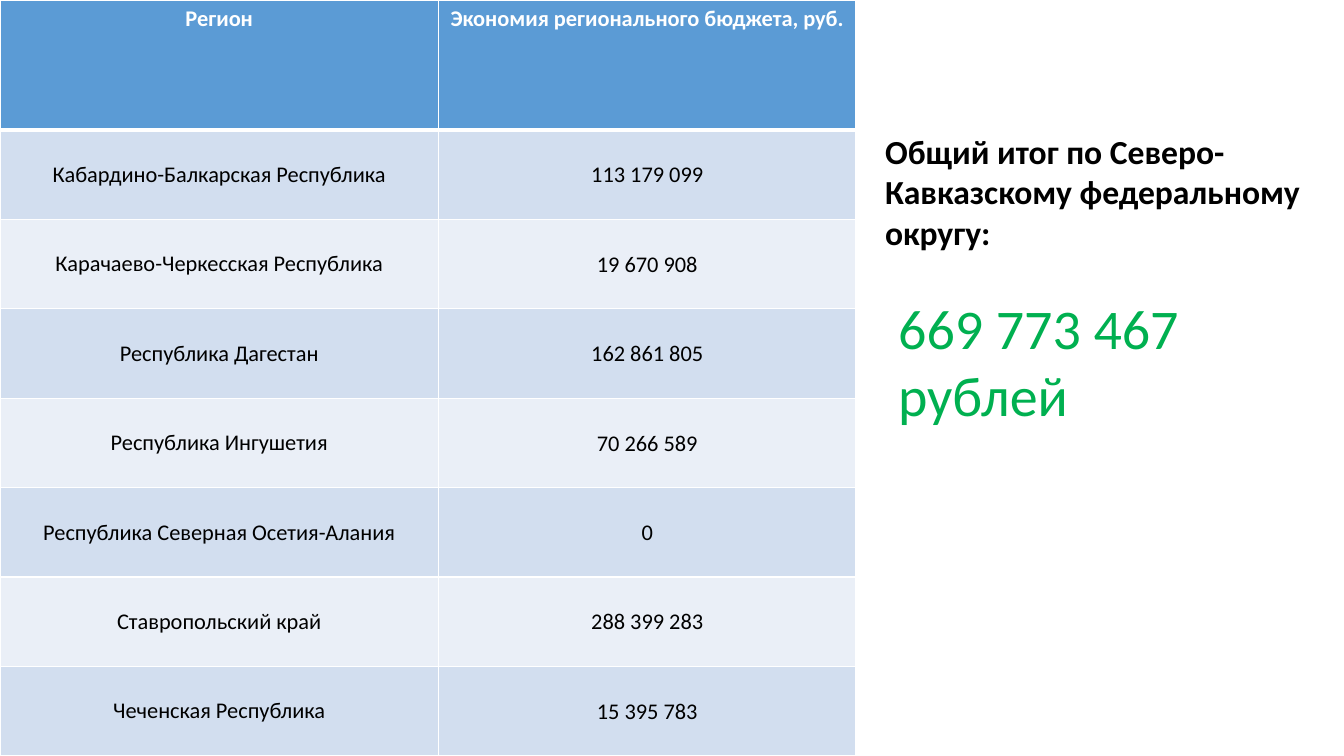
from dataclasses import dataclass

from lxml import etree
from pptx import Presentation
from pptx.dml.color import RGBColor
from pptx.enum.text import MSO_ANCHOR, MSO_AUTO_SIZE, PP_ALIGN
from pptx.oxml.ns import qn
from pptx.util import Inches, Pt

LEFT, CENTER = PP_ALIGN.LEFT, PP_ALIGN.CENTER
TOP, MIDDLE = MSO_ANCHOR.TOP, MSO_ANCHOR.MIDDLE
GROW = MSO_AUTO_SIZE.SHAPE_TO_FIT_TEXT


@dataclass(frozen=True)
class Theme:
    """Colours, type sizes and line widths of the slide."""
    font: str = "Calibri"
    white: str = "FFFFFF"
    black: str = "000000"
    green: str = "00B050"
    head: str = "5B9BD5"
    bands: tuple = ("D2DEEF", "EAEFF7")
    small: int = 16
    large: int = 24
    huge: int = 40
    thin: int = 1
    thick: int = 3


class Board:
    """Draws elements on one slide, placed in percent of its size."""

    def __init__(self, deck, theme):
        """Add a blank slide to the deck."""
        self.deck, self.theme = deck, theme
        self.slide = deck.slides.add_slide(deck.slide_layouts[6])

    def wide(self, share):
        """Turn a percent of the slide's width into a length."""
        return round(self.deck.slide_width * share / 100)

    def high(self, share):
        """Turn a percent of the slide's height into a length."""
        return round(self.deck.slide_height * share / 100)

    def box(self, left, top, width, height):
        """Turn four percents into a place and a size."""
        return self.wide(left), self.high(top), self.wide(width), self.high(height)

    def label(self, frame, words, size, color, bold=False, align=LEFT):
        """Fill a text frame with one styled paragraph."""
        para = frame.paragraphs[0]
        para.alignment = align
        run = para.add_run()
        run.text = words
        style = {"name": self.theme.font, "size": Pt(size), "bold": bold}
        for key, value in style.items():
            setattr(run.font, key, value)
        run.font.color.rgb = RGBColor.from_string(color)

    def text(self, place, words, size, color, bold=False):
        """Add a wrapped text box."""
        frame = self.slide.shapes.add_textbox(*self.box(*place)).text_frame
        frame.word_wrap = True
        frame.auto_size = GROW
        self.label(frame, words, size, color, bold)

    def edge(self, cell, widths):
        """Draw white borders round a cell."""
        props = cell._tc.get_or_add_tcPr()
        for spot, (side, width) in enumerate(widths.items()):
            line = etree.Element(qn(f"a:ln{side}"), w=str(Pt(width)))
            fill = etree.SubElement(line, qn("a:solidFill"))
            etree.SubElement(fill, qn("a:srgbClr"), val=self.theme.white)
            props.insert(spot, line)

    def cell(self, cell, words, row, col):
        """Style one table cell by its row and column."""
        look = self.theme
        head = row == 0
        form = {"vertical_anchor": TOP if head else MIDDLE}
        if col and not head:
            form |= dict.fromkeys(("margin_left", "margin_right", "margin_top"), Inches(0.01))
            form["margin_bottom"] = 0
        for key, value in form.items():
            setattr(cell, key, value)
        cell.fill.solid()
        fill = look.head if head else look.bands[(row - 1) % 2]
        cell.fill.fore_color.rgb = RGBColor.from_string(fill)
        ink = look.white if head else look.black
        self.label(cell.text_frame, words, look.small, ink, head, CENTER)
        widths = dict.fromkeys("LRTB", look.thin)
        if row < 2:
            widths["B" if head else "T"] = look.thick
        self.edge(cell, widths)

    def table(self, data, cols, first):
        """Add a full-height table at the left edge of the slide."""
        place = self.box(0, 0, sum(cols), 100)
        grid = self.slide.shapes.add_table(len(data), len(cols), *place).table
        for col, share in zip(grid.columns, cols):
            col.width = self.wide(share)
        rest = (100 - first) / (len(data) - 1)
        for row, line in enumerate(data):
            grid.rows[row].height = self.high(rest if row else first)
            for col, words in enumerate(line):
                self.cell(grid.cell(row, col), words, row, col)


SAVINGS = [
    ("Регион", "Экономия регионального бюджета, руб."),
    ("Кабардино-Балкарская Республика", "113 179 099"),
    ("Карачаево-Черкесская Республика", "19 670 908"),
    ("Республика Дагестан", "162 861 805"),
    ("Республика Ингушетия", "70 266 589"),
    ("Республика Северная Осетия-Алания", "0"),
    ("Ставропольский край", "288 399 283"),
    ("Чеченская Республика", "15 395 783"),
]


def main():
    """Build the slide and save it."""
    deck = Presentation()
    deck.slide_width, deck.slide_height = Inches(13.33), Inches(7.5)
    look = Theme()
    board = Board(deck, look)
    board.table(SAVINGS, cols=(32.63, 31.06), first=17.2)
    board.text((65.12, 16.67, 34.88, 17.47),
               "Общий итог по Северо-Кавказскому федеральному округу:",
               look.large, look.black, bold=True)
    board.text((66.09, 38.13, 33.91, 19.33), "669 773 467 рублей", look.huge, look.green)
    deck.save("out.pptx")


if __name__ == "__main__":
    main()
